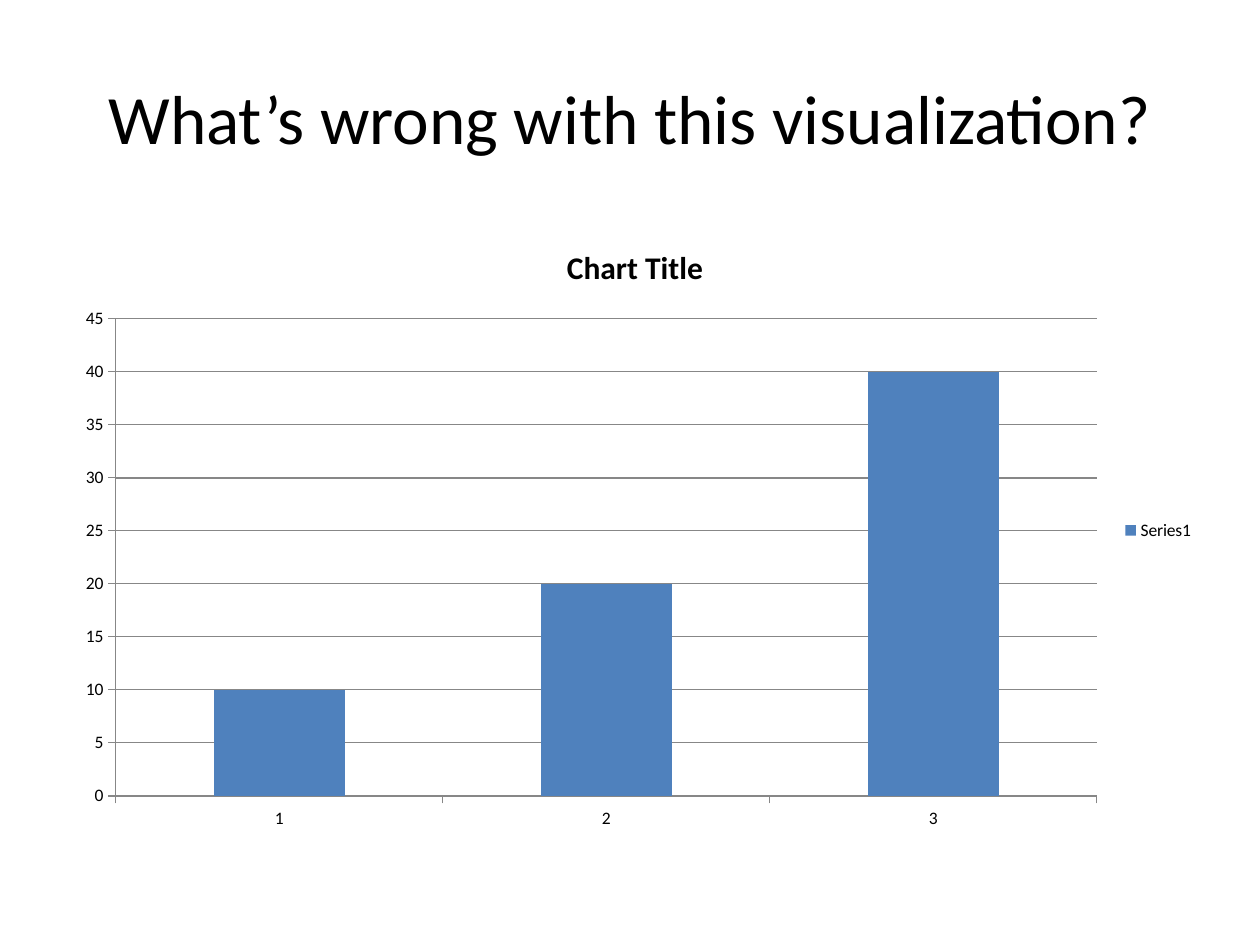
from pptx import Presentation
from pptx.chart.data import CategoryChartData
from pptx.dml.color import RGBColor
from pptx.enum.chart import XL_CHART_TYPE, XL_LEGEND_POSITION, XL_TICK_MARK
from pptx.enum.text import MSO_ANCHOR, PP_ALIGN
from pptx.util import Inches, Pt

FONT = "Calibri"
BLACK = RGBColor(0x00, 0x00, 0x00)
BAR_BLUE = RGBColor(0x4F, 0x81, 0xBD)
AXIS_GRAY = RGBColor(0x87, 0x87, 0x87)
CENTER = PP_ALIGN.CENTER
MIDDLE = MSO_ANCHOR.MIDDLE
COLUMNS = XL_CHART_TYPE.COLUMN_CLUSTERED
LEGEND_RIGHT = XL_LEGEND_POSITION.RIGHT
TICK_OUTSIDE = XL_TICK_MARK.OUTSIDE


def style_font(font, size, bold=False):
    font.name = FONT
    font.size = Pt(size)
    font.bold = bold
    font.color.rgb = BLACK


def style_line(line):
    line.color.rgb = AXIS_GRAY
    line.width = Pt(0.75)


def add_heading(page, text):
    box = page.shapes.add_textbox(Inches(0.5), Inches(0.3), Inches(9), Inches(1.25))
    frame = box.text_frame
    frame.word_wrap = True
    frame.vertical_anchor = MIDDLE
    frame.text = text
    para = frame.paragraphs[0]
    para.alignment = CENTER
    style_font(para.runs[0].font, 39.6)


def style_axis(axis):
    axis.major_tick_mark = TICK_OUTSIDE
    style_line(axis.format.line)


def add_column_chart(page, title, series_name, categories, values):
    data = CategoryChartData()
    data.categories = categories
    data.add_series(series_name, values)
    chart = page.shapes.add_chart(
        COLUMNS, Inches(0.5), Inches(1.75), Inches(9.08), Inches(4.92), data
    ).chart
    style_font(chart.font, 10)

    chart.has_title = True
    chart.chart_title.include_in_layout = False
    title_frame = chart.chart_title.text_frame
    title_frame.text = title
    style_font(title_frame.paragraphs[0].runs[0].font, 18, bold=True)

    chart.has_legend = True
    chart.legend.position = LEGEND_RIGHT
    chart.legend.include_in_layout = False

    for axis in (chart.category_axis, chart.value_axis):
        style_axis(axis)
    chart.value_axis.has_major_gridlines = True
    style_line(chart.value_axis.major_gridlines.format.line)

    plot = chart.plots[0]
    plot.gap_width = 150
    plot.vary_by_categories = False
    fill = plot.series[0].format.fill
    fill.solid()
    fill.fore_color.rgb = BAR_BLUE


def main():
    deck = Presentation()
    deck.slide_width = Inches(10)
    deck.slide_height = Inches(7.5)
    page = deck.slides.add_slide(deck.slide_layouts[6])
    add_heading(page, "What’s wrong with this visualization?")
    add_column_chart(page, "Chart Title", "Series1", ["1", "2", "3"], [10, 20, 40])
    deck.save("out.pptx")


if __name__ == "__main__":
    main()
